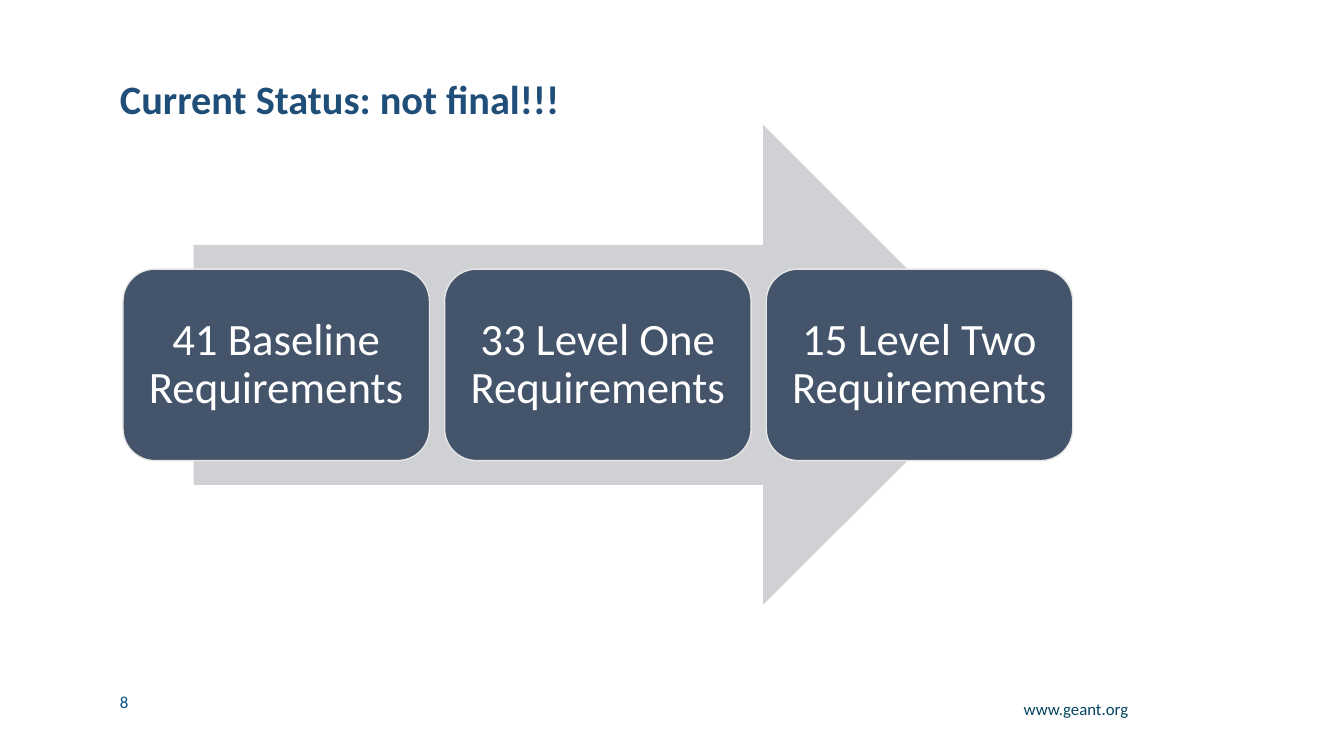
from dataclasses import dataclass

from pptx import Presentation
from pptx.dml.color import RGBColor
from pptx.enum.shapes import MSO_SHAPE
from pptx.enum.text import MSO_ANCHOR, MSO_AUTO_SIZE, PP_ALIGN
from pptx.util import Emu, Pt

ARROW = MSO_SHAPE.RIGHT_ARROW
ROUND = MSO_SHAPE.ROUNDED_RECTANGLE
TOP, MIDDLE = MSO_ANCHOR.TOP, MSO_ANCHOR.MIDDLE
LEFT, CENTER, RIGHT = PP_ALIGN.LEFT, PP_ALIGN.CENTER, PP_ALIGN.RIGHT
NO_FIT = MSO_AUTO_SIZE.NONE

FONT = "Calibri"
WHITE, NAVY, SLATE = "FFFFFF", "1F4E79", "44546A"
GREY, PALE = "CFD1D4", "E7E6E6"


@dataclass
class Box:
    left: int
    top: int
    width: int
    height: int


@dataclass
class Style:
    size: float
    color: str
    align: PP_ALIGN = LEFT
    anchor: MSO_ANCHOR = TOP
    bold: bool = False
    spacing: float = 0.9


def px(n: int) -> Emu:
    """100 px make one inch."""
    return Emu(n * 9144)


def rgb(code: str) -> RGBColor:
    return RGBColor.from_string(code)


def place(shape, box: Box) -> None:
    shape.left, shape.top = px(box.left), px(box.top)
    shape.width, shape.height = px(box.width), px(box.height)


def write(shape, text: str, style: Style) -> None:
    frame = shape.text_frame
    frame.word_wrap = True
    frame.auto_size = NO_FIT
    frame.vertical_anchor = style.anchor
    para = frame.paragraphs[0]
    para.text = text
    para.alignment = style.align
    para.line_spacing = style.spacing
    font = para.font
    font.name, font.size, font.bold = FONT, Pt(style.size), style.bold
    font.color.rgb = rgb(style.color)


def label(slide, box: Box, text: str, style: Style) -> None:
    shape = slide.shapes.add_textbox(0, 0, 0, 0)
    place(shape, box)
    write(shape, text, style)


def draw(slide, kind: MSO_SHAPE, box: Box, fill: str, line: str = ""):
    shape = slide.shapes.add_shape(kind, 0, 0, 0, 0)
    place(shape, box)
    shape.shadow.inherit = False
    shape.fill.solid()
    shape.fill.fore_color.rgb = rgb(fill)
    if line:
        shape.line.color.rgb = rgb(line)
        shape.line.width = Pt(1)
    else:
        shape.line.fill.background()
    return shape


def card(slide, box: Box, text: str) -> None:
    shape = draw(slide, ROUND, box, SLATE, PALE)
    write(shape, text, Style(32, WHITE, CENTER, MIDDLE))
    frame = shape.text_frame
    frame.margin_left = frame.margin_right = px(13)
    frame.margin_top = frame.margin_bottom = px(13)


def main() -> None:
    deck = Presentation()
    deck.slide_width, deck.slide_height = px(1333), px(750)
    slide = deck.slides.add_slide(deck.slide_layouts[5])

    # Title
    title = slide.shapes.title
    place(title, Box(109, 77, 1082, 47))
    write(title, "Current Status: not final!!!",
          Style(28.8, NAVY, anchor=MIDDLE, bold=True))

    # Footer
    label(slide, Box(109, 681, 145, 30), "8", Style(12, "065081", spacing=1.0))
    label(slide, Box(961, 691, 168, 37), "www.geant.org",
          Style(12, "03435F", RIGHT))

    # Arrow with the three levels on it
    draw(slide, ARROW, Box(192, 124, 803, 476), GREY)
    levels = ["41 Baseline", "33 Level One", "15 Level Two"]
    for i, level in enumerate(levels):
        card(slide, Box(122 + 319 * i, 267, 304, 190), f"{level} Requirements")

    deck.save("out.pptx")


if __name__ == "__main__":
    main()
